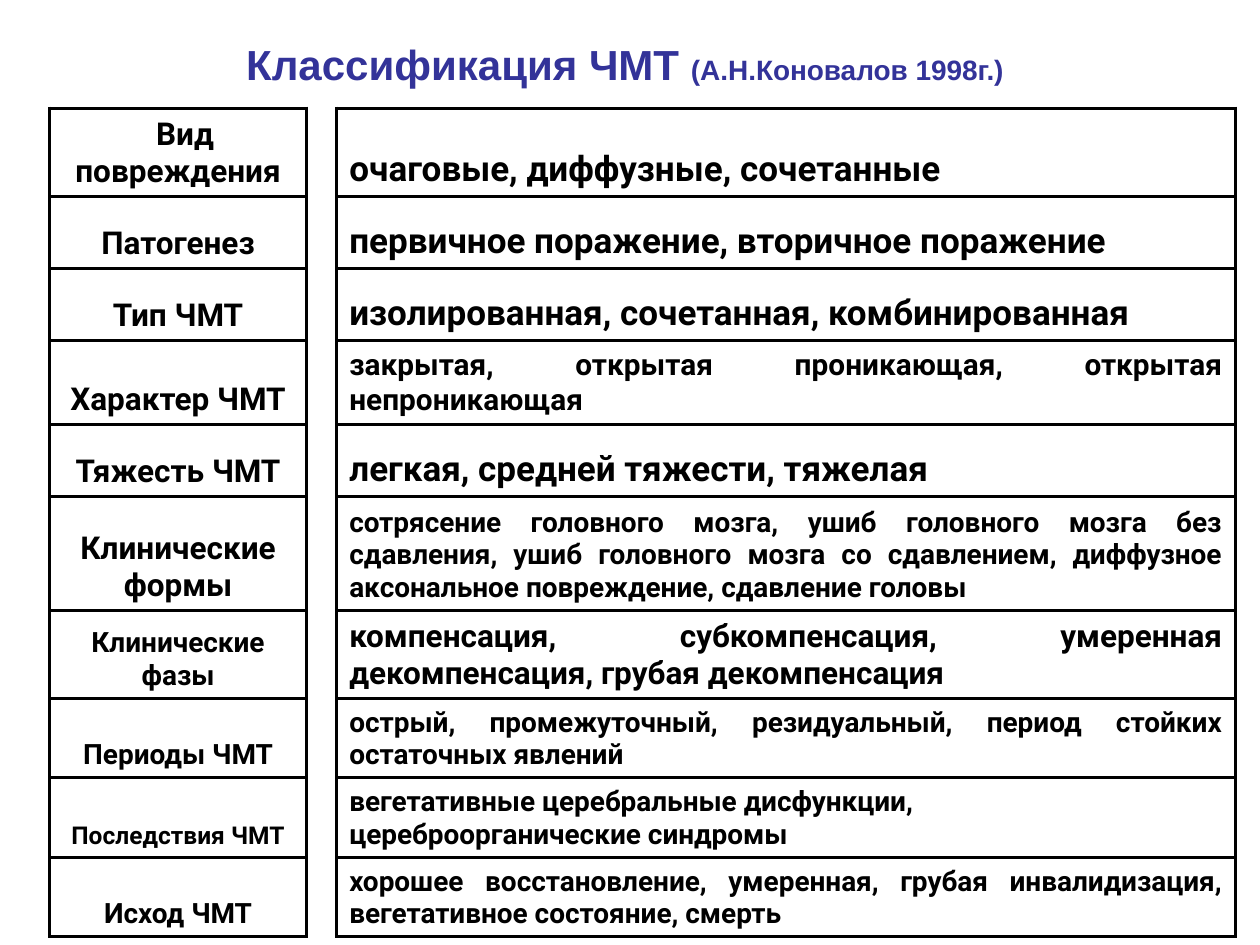
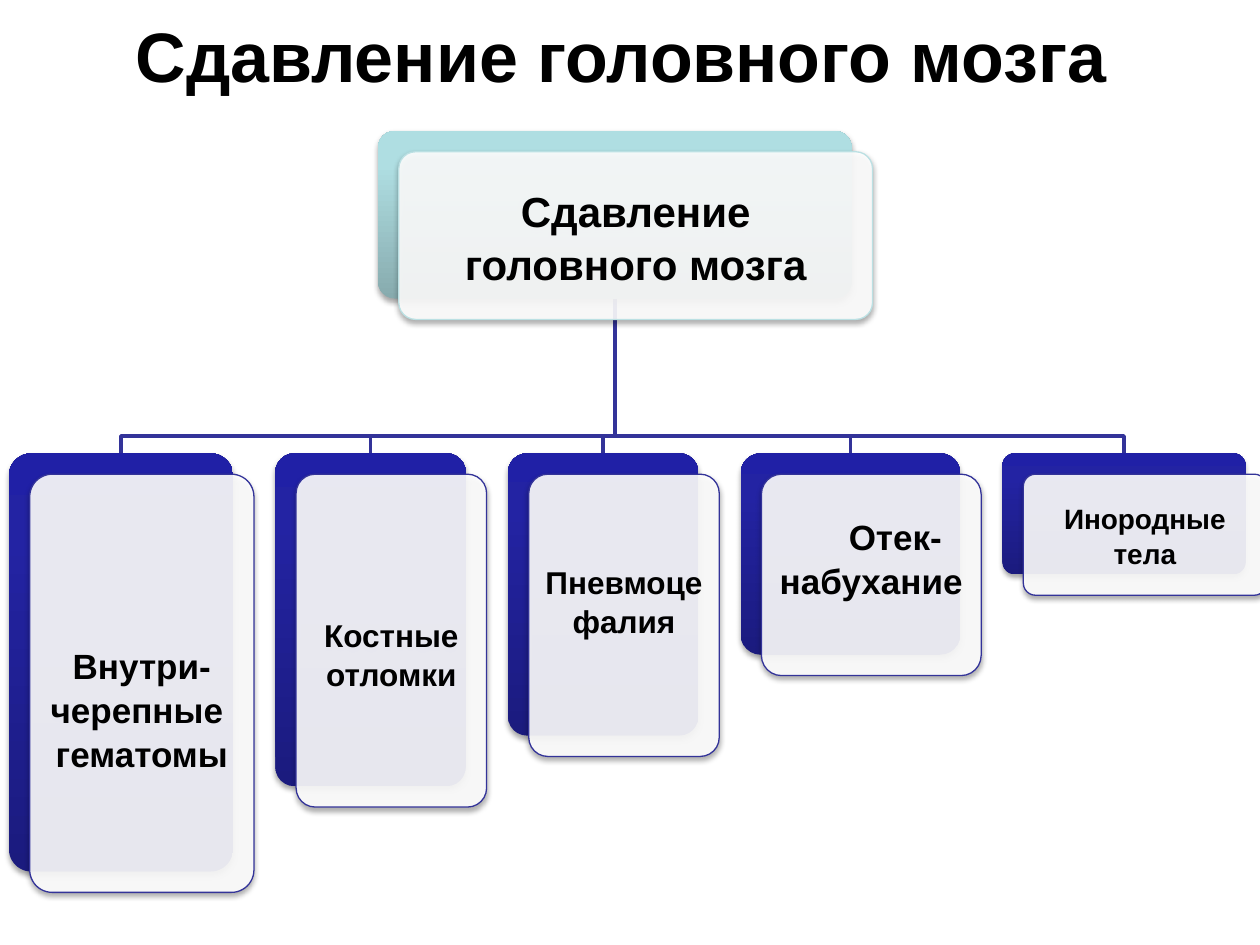
from itertools import accumulate
from pptx import Presentation
from pptx.dml.color import RGBColor
from pptx.enum.shapes import MSO_SHAPE
from pptx.enum.text import MSO_ANCHOR, MSO_AUTO_SIZE, PP_ALIGN
from pptx.oxml import parse_xml
from pptx.oxml.ns import nsdecls, qn
from pptx.util import Cm, Pt

COLORS = {"black": "000000", "white": "FFFFFF", "blue": "333399", "aqua": "BBE0E3"}
AQUA_GRADIENT = ("87ABAE", "AFDEE2", "AFE0E4")
BLUE_GRADIENT = ("1B1B7E", "2323A3", "2020A6")
HEAD_FONT, TABLE_FONT = "Arial", "Roboto"


def write(tf, paras, font=HEAD_FONT, color="black", align=PP_ALIGN.CENTER,
          spacing=None, indent=0):
    """Fill a text frame with paragraphs, each a list of (text, size) runs."""
    tf.word_wrap = True
    for i, runs in enumerate(paras):
        p = tf.add_paragraph() if i else tf.paragraphs[0]
        p.alignment = align
        if spacing:
            p.line_spacing = spacing
        if indent:
            p._p.get_or_add_pPr().set("indent", str(Cm(indent)))
        for text, size in runs:
            r = p.add_run()
            r.text = text
            r.font.name, r.font.size, r.font.bold = font, Pt(size), True
            r.font.color.rgb = RGBColor.from_string(COLORS[color])


def add_card(s, x, y, w, h, gradient, line, paras, inset, top=0, bottom=0, indent=0):
    """Add a gradient plate with a translucent, captioned plate in front of it."""
    for shift in (0, 0.42):
        sp = s.shapes.add_shape(MSO_SHAPE.ROUNDED_RECTANGLE, Cm(x + shift),
                                Cm(y + shift), Cm(w), Cm(h))
        sp.adjustments[0] = 0.1
        sp_pr = sp._element.spPr
        if shift:
            sp.fill.solid()
            sp.fill.fore_color.rgb = RGBColor.from_string(COLORS["white"])
            sp_pr.find(".//" + qn("a:srgbClr")).append(
                parse_xml(f'<a:alpha {nsdecls("a")} val="90000"/>'))
            sp.line.color.rgb = RGBColor.from_string(COLORS[line])
            sp.line.width = Pt(0.75)
        else:
            stops = "".join(f'<a:gs pos="{pos}"><a:srgbClr val="{c}"/></a:gs>'
                            for pos, c in zip((0, 80000, 100000), gradient))
            sp_pr.insert(2, parse_xml(
                f'<a:gradFill {nsdecls("a")} rotWithShape="1"><a:gsLst>{stops}</a:gsLst>'
                '<a:lin ang="16200000" scaled="0"/></a:gradFill>'))
            sp.line.fill.background()
        sp_pr.append(parse_xml(
            f'<a:effectLst {nsdecls("a")}><a:outerShdw blurRad="{Pt(3.1)}" '
            f'dist="{Pt(1.8)}" dir="5400000" rotWithShape="0">'
            f'<a:srgbClr val="{COLORS["black"]}"><a:alpha val="35000"/></a:srgbClr>'
            '</a:outerShdw></a:effectLst>'))
    tf = sp.text_frame
    tf.vertical_anchor = MSO_ANCHOR.MIDDLE
    tf.margin_left = tf.margin_right = Cm(inset)
    tf.margin_top, tf.margin_bottom = Cm(inset + top), Cm(inset + bottom)
    write(tf, paras, spacing=1.05, indent=indent)


prs = Presentation()
prs.slide_width, prs.slide_height = Cm(25.4), Cm(19.05)

# Slides and their titles: box, colour, runs
titles = [
    ((0.4, 0.4, 24.4, 1.78), "blue",
     [("Классификация ЧМТ ", 24), ("(А.Н.Коновалов 1998г.)", 16)]),
    ((1.09, 0, 22.86, 2.18), "black", [("Сдавление головного мозга", 40)]),
]
slides = []
for box, color, runs in titles:
    s = prs.slides.add_slide(prs.slide_layouts[5])
    title = s.shapes.title
    title.left, title.top, title.width, title.height = map(Cm, box)
    tf = title.text_frame
    tf.auto_size = MSO_AUTO_SIZE.NONE
    tf.vertical_anchor = MSO_ANCHOR.MIDDLE
    write(tf, [runs], color=color)
    slides.append(s)
class_slide, scheme_slide = slides

# Classification table: row height, heading and size, description and size
rows = [
    (1.78, "Вид повреждения", 18, ["очаговые, диффузные, сочетанные"], 20),
    (1.45, "Патогенез", 18, ["первичное поражение, вторичное поражение"], 20),
    (1.45, "Тип ЧМТ", 18, ["изолированная, сочетанная, комбинированная"], 20),
    (1.7, "Характер ЧМТ", 18,
     ["закрытая, открытая проникающая, открытая непроникающая"], 17),
    (1.45, "Тяжесть ЧМТ", 18, ["легкая, средней тяжести, тяжелая"], 20),
    (2.29, "Клинические формы", 18,
     ["сотрясение головного мозга, ушиб головного мозга без сдавления, "
      "ушиб головного мозга со сдавлением, диффузное аксональное повреждение, "
      "сдавление головы"], 16),
    (1.78, "Клинические фазы", 16,
     ["компенсация, субкомпенсация, умеренная декомпенсация, "
      "грубая декомпенсация"], 18),
    (1.6, "Периоды ЧМТ", 16,
     ["острый, промежуточный, резидуальный, период стойких остаточных явлений"], 16),
    (1.6, "Последствия ЧМТ", 14,
     ["вегетативные церебральные дисфункции, ", "цереброорганические синдромы"], 16),
    (1.6, "Исход ЧМТ", 16,
     ["хорошее восстановление, умеренная, грубая инвалидизация, "
      "вегетативное состояние, смерть"], 16),
]
widths = (5.18, 0.58, 18.11)
table = class_slide.shapes.add_table(
    len(rows), len(widths), Cm(1), Cm(2.18), Cm(sum(widths)),
    Cm(sum(row[0] for row in rows))).table
table.first_row = table.horz_banding = False
for col, width in zip(table.columns, widths):
    col.width = Cm(width)
for i, (height, heading, heading_size, lines, size) in enumerate(rows):
    table.rows[i].height = Cm(height)
    for j, cell in enumerate(table.rows[i].cells):
        cell.vertical_anchor = MSO_ANCHOR.BOTTOM
        cell.fill.background()
        # The narrow gap column has side borders only
        for k, side in enumerate("LRTB"):
            paint = (f'<a:solidFill><a:srgbClr val="{COLORS["black"]}"/></a:solidFill>'
                     if j != 1 or side in "LR" else "<a:noFill/>")
            cell._tc.get_or_add_tcPr().insert(k, parse_xml(
                f'<a:ln{side} {nsdecls("a")} w="{Pt(2)}">{paint}</a:ln{side}>'))
    write(table.cell(i, 0).text_frame, [[(heading, heading_size)]], TABLE_FONT,
          indent=0 if i else 0.28)
    write(table.cell(i, 2).text_frame, [[(line, size)] for line in lines], TABLE_FONT,
          align=PP_ALIGN.JUSTIFY)

# Scheme: width, height, caption, size, inset, extra top and bottom, first-line indent
causes = [
    (4.52, 8.43, ["Внутри-черепные ", "гематомы"], 20, 0.13, 1, 0, 0),
    (3.84, 6.71, ["Костные отломки"], 18, 0.13, 0.52, 0, 0),
    (3.84, 5.69, ["Пневмоцефалия"], 18, 0.18, 0, 0.6, 0),
    (4.43, 4.06, ["Отек-набухание"], 20, 0.2, 0, 0.72, 0.97),
    (4.9, 2.44, ["Инородные тела"], 16, 0.18, 0, 0, 0),
]
gap, row_y, bus_y = 0.85, 9.14, 8.79
root_x, root_y, root_w, root_h = 7.62, 2.64, 9.55, 3.38
lefts = list(accumulate((c[0] + gap for c in causes[:-1]), initial=0.18))

# Branches from the root card to each cause
trunk_x = root_x + root_w / 2
for x, cause in zip(lefts, causes):
    drop_x = x + cause[0] / 2
    fb = scheme_slide.shapes.build_freeform(Cm(trunk_x), Cm(root_y + root_h))
    fb.add_line_segments([(Cm(trunk_x), Cm(bus_y)), (Cm(drop_x), Cm(bus_y)),
                          (Cm(drop_x), Cm(row_y))], close=False)
    branch = fb.convert_to_shape()
    branch.shadow.inherit = False
    branch.fill.background()
    branch.line.color.rgb = RGBColor.from_string(COLORS["blue"])
    branch.line.width = Pt(2)

# Cards
add_card(scheme_slide, root_x, root_y, root_w, root_h, AQUA_GRADIENT, "aqua",
         [[("Сдавление головного мозга", 24)]], 0.25)
for x, (w, h, lines, size, inset, top, bottom, indent) in zip(lefts, causes):
    add_card(scheme_slide, x, row_y, w, h, BLUE_GRADIENT, "blue",
             [[(line, size)] for line in lines], inset, top, bottom, indent)

prs.save("out.pptx")
